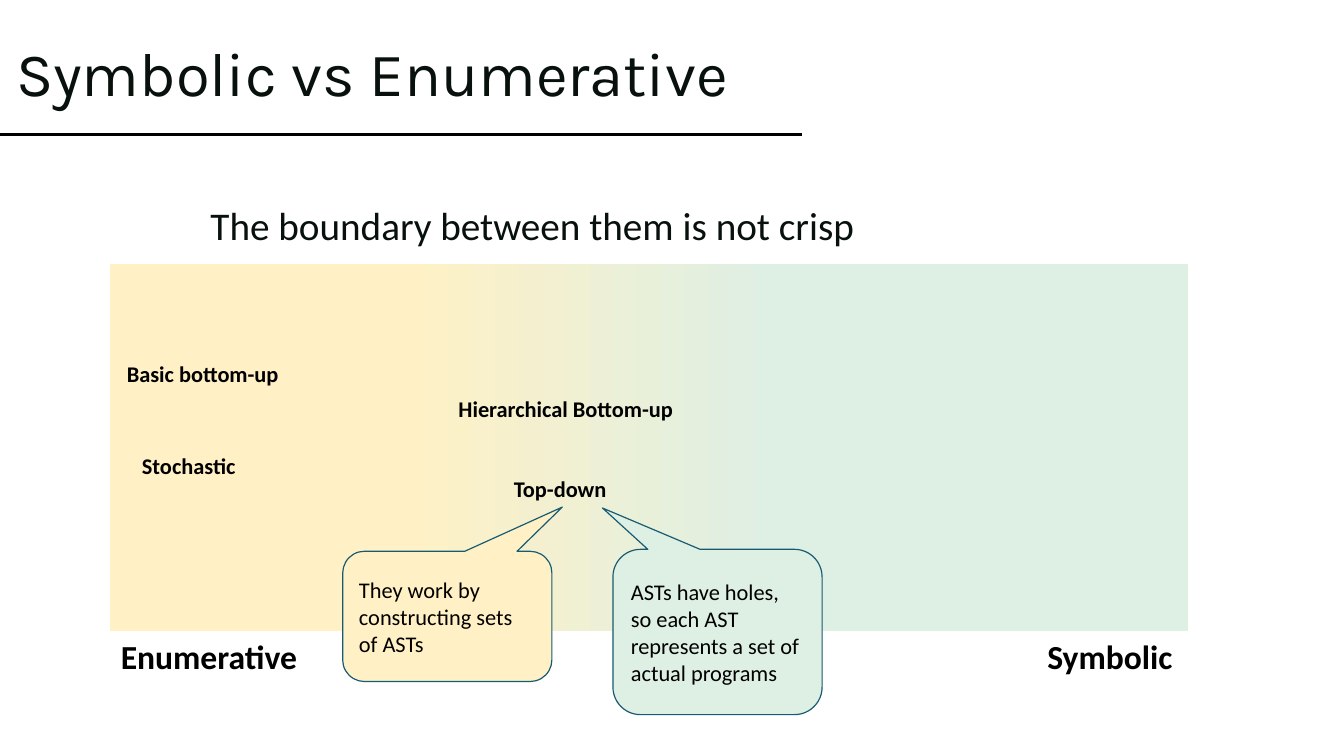
from copy import deepcopy
from dataclasses import dataclass

from pptx import Presentation
from pptx.dml.color import RGBColor
from pptx.enum import shapes, text
from pptx.oxml import ns
from pptx.util import Pt
from lxml import etree


@dataclass(frozen=True)
class Theme:
    ink: str = "08110B"
    black: str = "000000"
    outline: str = "175B73"
    enumerative: str = "FFF1C5"
    symbolic: str = "DEEFE4"
    heading_font: str = "Karla"
    body_font: str = "Calibri"
    title_size: int = 44
    statement_size: int = 28
    pole_size: int = 24
    label_size: int = 16


class SlideBuilder:
    """Draws on one slide; every length is in points."""

    def __init__(self, slide, theme):
        self.slide, self.theme = slide, theme

    def set_text(self, frame, words, size, color, font=None, bold=False):
        frame.text = words
        paragraph = frame.paragraphs[0]
        paragraph.alignment = text.PP_ALIGN.LEFT
        paragraph.font.name = font or self.theme.body_font
        paragraph.font.size = Pt(size)
        paragraph.font.bold = bold
        paragraph.font.color.rgb = RGBColor.from_string(color)
        return paragraph

    def title(self, words, left, top, width, height):
        heading = self.slide.shapes.title
        heading.left, heading.top = Pt(left), Pt(top)
        heading.width, heading.height = Pt(width), Pt(height)
        frame = heading.text_frame
        frame.vertical_anchor = text.MSO_ANCHOR.MIDDLE
        paragraph = self.set_text(frame, words, self.theme.title_size,
                                  self.theme.ink, self.theme.heading_font)
        paragraph.line_spacing = 0.9

    def rule(self, x1, y1, x2, y2, weight):
        line = self.slide.shapes.add_connector(
            shapes.MSO_CONNECTOR.STRAIGHT, Pt(x1), Pt(y1), Pt(x2), Pt(y2))
        line.line.color.rgb = RGBColor.from_string(self.theme.black)
        line.line.width = Pt(weight)
        etree.SubElement(line._element.spPr, ns.qn("a:effectLst"))

    def spectrum(self, left, top, width, height, stops):
        band = self.slide.shapes.add_shape(
            shapes.MSO_SHAPE.RECTANGLE, Pt(left), Pt(top), Pt(width), Pt(height))
        band.shadow.inherit = False
        band.line.fill.background()
        band.fill.gradient()
        band.fill.gradient_angle = 0
        # Extend the default two stops to as many as needed
        stop_list = band._element.spPr.find(".//" + ns.qn("a:gsLst"))
        while len(stop_list) < len(stops):
            stop_list.append(deepcopy(stop_list[0]))
        for stop, (position, color) in zip(band.fill.gradient_stops, stops):
            stop.position = position
            stop.color.rgb = RGBColor.from_string(color)

    def statement(self, words, left, top, width, height):
        box = self.slide.shapes.add_textbox(Pt(left), Pt(top), Pt(width), Pt(height))
        box.text_frame.word_wrap = True
        paragraph = self.set_text(box.text_frame, words,
                                  self.theme.statement_size, self.theme.ink)
        paragraph.line_spacing = 0.9
        paragraph.space_before = Pt(10)

    def label(self, words, left, top, width, size):
        box = self.slide.shapes.add_textbox(Pt(left), Pt(top), Pt(width), Pt(size * 1.2 + 7.2))
        box.text_frame.word_wrap = False
        self.set_text(box.text_frame, words, size, self.theme.black, bold=True)

    def callout(self, words, left, top, width, height, fill, tip):
        bubble = self.slide.shapes.add_shape(
            shapes.MSO_SHAPE.ROUNDED_RECTANGULAR_CALLOUT,
            Pt(left), Pt(top), Pt(width), Pt(height))
        bubble.shadow.inherit = False
        bubble.adjustments[0], bubble.adjustments[1] = tip
        bubble.fill.solid()
        bubble.fill.fore_color.rgb = RGBColor.from_string(fill)
        bubble.line.color.rgb = RGBColor.from_string(self.theme.outline)
        bubble.line.width = Pt(0.85)
        frame = bubble.text_frame
        frame.word_wrap = True
        frame.vertical_anchor = text.MSO_ANCHOR.MIDDLE
        self.set_text(frame, words, self.theme.label_size, self.theme.black)


def main():
    deck = Presentation()
    deck.slide_width, deck.slide_height = Pt(960), Pt(540)
    theme = Theme()
    page = SlideBuilder(deck.slides.add_slide(deck.slide_layouts[5]), theme)

    # Heading
    page.rule(0, 95.8, 573, 95.8, 2.25)
    page.title("Symbolic vs Enumerative", 4.3, 2.2, 540.7, 104.4)

    # Spectrum from enumerative to symbolic
    page.spectrum(78.5, 188.6, 770.4, 262.1, [
        (0, theme.enumerative), (0.27, theme.enumerative),
        (0.62, theme.symbolic), (1, theme.symbolic)])
    page.statement("The boundary between them is not crisp", 143.3, 144, 751, 58.3)

    # Techniques placed along the spectrum
    for technique, left, top, width in [
            ("Basic bottom-up", 83.5, 253.4, 124.6),
            ("Stochastic", 94.3, 319.7, 82),
            ("Hierarchical Bottom-up", 320.4, 278.6, 170),
            ("Top-down", 360, 335.5, 81.4)]:
        page.label(technique, left, top, width, theme.label_size)

    # Names of the two ends
    for pole, left, width in [("Enumerative", 79.2, 141.8), ("Symbolic", 741, 105)]:
        page.label(pole, left, 450.7, width, theme.pole_size)

    # Why top-down sits in the middle
    page.callout("They work by constructing sets of ASTs",
                 244.8, 393.8, 149.4, 93, theme.enumerative, (0.55, -0.84))
    page.callout("ASTs have holes, so each AST represents a set of actual programs",
                 437.8, 392.4, 149.4, 118.1, theme.symbolic, (-0.55, -0.75))

    deck.save("out.pptx")


if __name__ == "__main__":
    main()
